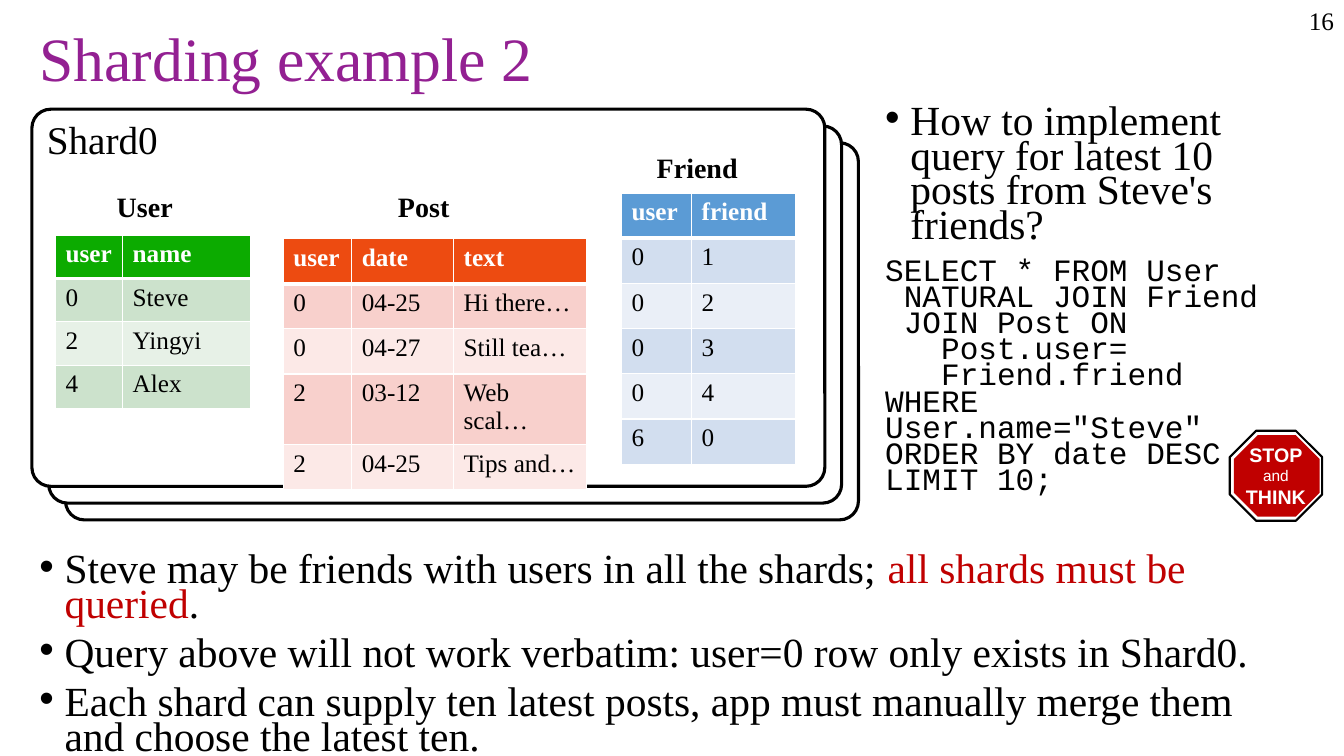
from lxml import etree
from pptx import Presentation
from pptx.dml.color import RGBColor
from pptx.enum.shapes import MSO_SHAPE as Shape
from pptx.enum.text import MSO_ANCHOR as Anchor, PP_ALIGN as Align
from pptx.oxml.ns import qn
from pptx.util import Inches, Pt

BLACK = RGBColor(0x00, 0x00, 0x00)
WHITE = RGBColor(0xFF, 0xFF, 0xFF)
PURPLE = RGBColor(0x93, 0x20, 0x92)
RED = RGBColor(0xC0, 0x00, 0x00)
GREEN, GREEN_MID, GREEN_PALE = (RGBColor(0x0C, 0xAB, 0x00), RGBColor(0xCC, 0xE2, 0xCC),
                                RGBColor(0xE7, 0xF1, 0xE7))
ORANGE, ORANGE_MID, ORANGE_PALE = (RGBColor(0xED, 0x4B, 0x11), RGBColor(0xF8, 0xD0, 0xCC),
                                   RGBColor(0xFC, 0xE9, 0xE7))
BLUE, BLUE_MID, BLUE_PALE = (RGBColor(0x5B, 0x9B, 0xD5), RGBColor(0xD2, 0xDE, 0xEF),
                             RGBColor(0xEA, 0xEF, 0xF7))
SERIF, MONO, SANS = "Times New Roman", "Courier New", "Arial"
BULLET_SIZE, CODE_SIZE = 29.6, 22.2
LINE_SPACING = 0.7

deck = Presentation()
deck.slide_width, deck.slide_height = Inches(13.33), Inches(7.5)
page = deck.slides.add_slide(deck.slide_layouts[6])
shapes = page.shapes

# Grid of 80 columns by 45 rows
COL, ROW = deck.slide_width / 80, deck.slide_height / 45


def place(left, top, width, height):
    return int(left * COL), int(top * ROW), int(width * COL), int(height * ROW)


def write(para, text, size, color=BLACK, font=SERIF, bold=False):
    span = para.add_run()
    span.text = text
    span.font.size, span.font.name, span.font.bold = Pt(size), font, bold
    span.font.color.rgb = color


# Page number and title
box = shapes.add_textbox(*place(76.1, 0, 3.9, 2.4))
para = box.text_frame.paragraphs[0]
para.alignment = Align.RIGHT
write(para, "16", 18)

box = shapes.add_textbox(*place(1.75, 1, 76.4, 5.3))
box.text_frame.word_wrap = True
box.text_frame.vertical_anchor = Anchor.MIDDLE
para = box.text_frame.paragraphs[0]
para.line_spacing = 0.9
write(para, "Sharding example 2", 44, PURPLE)

# Stack of shards, one grid step apart, back to front
for step in (2, 1, 0):
    shard = shapes.add_shape(Shape.ROUNDED_RECTANGLE, *place(1.9 + step, 6.5 + step, 47.2, 22.45))
    shard.adjustments[0] = 0.05
    shard.shadow.inherit = False
    shard.fill.solid()
    shard.fill.fore_color.rgb = WHITE
    shard.line.color.rgb = BLACK
    shard.line.width = Pt(2.25)

# Labels
for text, left, top, width, size, bold in (
    ("Shard0", 2.2, 6.56, 8.2, 28, False),
    ("User", 6.36, 11, 5.5, 20, True),
    ("Post", 23.1, 11, 5.5, 20, True),
    ("Friend", 38.5, 8.66, 7, 20, True),
):
    box = shapes.add_textbox(*place(left, top, width, 2.6))
    box.text_frame.word_wrap = True
    write(box.text_frame.paragraphs[0], text, size, bold=bold)

# Tables: left, top, column widths, row height, fills, rows
tables = (
    (3.3, 14, (4, 7.6), 2.58, (GREEN, GREEN_MID, GREEN_PALE),
     (("user", "name"), ("0", "Steve"), ("2", "Yingyi"), ("4", "Alex"))),
    (16.86, 14.2, (4.08, 6.06, 7.92), 2.69, (ORANGE, ORANGE_MID, ORANGE_PALE),
     (("user", "date", "text"), ("0", "04-25", "Hi there…"), ("0", "04-27", "Still tea…"),
      ("2", "03-12", "Web scal…"), ("2", "04-25", "Tips and…"))),
    (37, 11.5, (4.17, 6.2), 2.69, (BLUE, BLUE_MID, BLUE_PALE),
     (("user", "friend"), ("0", "1"), ("0", "2"), ("0", "3"), ("0", "4"), ("6", "0"))),
)
for left, top, widths, row_height, (head, odd, even), rows in tables:
    frame = shapes.add_table(len(rows), len(widths),
                             *place(left, top, sum(widths), row_height * len(rows)))
    table = frame.table
    for column, width in zip(table.columns, widths):
        column.width = int(width * COL)
    for r, values in enumerate(rows):
        table.rows[r].height = int(row_height * ROW)
        for c, value in enumerate(values):
            cell = table.cell(r, c)
            write(cell.text_frame.paragraphs[0], value, 18, BLACK if r else WHITE, bold=r == 0)
            # White borders, thick between the header and the first row
            props = cell._tc.get_or_add_tcPr()
            for side in ("L", "R", "T", "B"):
                thick = (r, side) in ((0, "B"), (1, "T"))
                border = etree.SubElement(props, qn(f"a:ln{side}"), w=str(Pt(3 if thick else 1)))
                paint = etree.SubElement(border, qn("a:solidFill"))
                etree.SubElement(paint, qn("a:srgbClr"), val=str(WHITE))
            cell.fill.solid()
            cell.fill.fore_color.rgb = head if r == 0 else odd if r % 2 else even

# Bulleted text: question on the right, answers below
question = shapes.add_textbox(*place(52.1, 6.1, 26.15, 24.6))
answers = shapes.add_textbox(*place(1.75, 32.8, 76.4, 11.05))
bullets = (
    (question, (("How to implement query for latest 10 posts from Steve's friends?", BLACK),)),
    (answers, (("Steve may be friends with users in all the shards; ", BLACK),
               ("all shards must be queried", RED), (".", BLACK))),
    (answers, (("Query above will not work verbatim: user=0 row only exists in Shard0.", BLACK),)),
    (answers, (("Each shard can supply ten latest posts, app must manually merge them "
                "and choose the latest ten.", BLACK),)),
)
for box, spans in bullets:
    text_frame = box.text_frame
    text_frame.word_wrap = True
    para = text_frame.paragraphs[0]
    if para.runs:
        para = text_frame.add_paragraph()
    para.line_spacing, para.space_before = LINE_SPACING, Pt(10)
    props = para._p.get_or_add_pPr()
    props.set("marL", str(Inches(0.25)))
    props.set("indent", str(-Inches(0.25)))
    etree.SubElement(props, qn("a:buFont"), typeface=SANS)
    etree.SubElement(props, qn("a:buChar"), char="•")
    for text, color in spans:
        write(para, text, BULLET_SIZE, color)

# Query, under the question
query = """SELECT * FROM User
 NATURAL JOIN Friend
 JOIN Post ON
   Post.user=
   Friend.friend
WHERE User.name="Steve" ORDER BY date DESC LIMIT 10;"""
para = question.text_frame.add_paragraph()
para.line_spacing, para.space_before = LINE_SPACING, Pt(10)
for number, line in enumerate(query.splitlines()):
    if number:
        para.add_line_break()
    write(para, line, CODE_SIZE, font=MONO)

# Stop sign
sign = shapes.add_group_shape()
for area, color in ((place(73.2, 25.64, 5.5, 5.36), WHITE), (place(73.45, 25.9, 5.1, 4.85), RED)):
    plate = sign.shapes.add_shape(Shape.OCTAGON, *area)
    plate.shadow.inherit = False
    plate.fill.solid()
    plate.fill.fore_color.rgb = color
    if color == WHITE:
        plate.line.color.rgb = BLACK
        plate.line.width = Pt(1.5)
    else:
        plate.line.fill.background()
box = sign.shapes.add_textbox(*place(73.2, 25.64, 5.5, 5.36))
text_frame = box.text_frame
text_frame.word_wrap = True
text_frame.vertical_anchor = Anchor.MIDDLE
for number, (word, size) in enumerate((("STOP", 14), ("and", 11), ("THINK", 14))):
    para = text_frame.add_paragraph() if number else text_frame.paragraphs[0]
    para.alignment = Align.CENTER
    write(para, word, size, WHITE, SANS, bold=size == 14)

deck.save("out.pptx")
